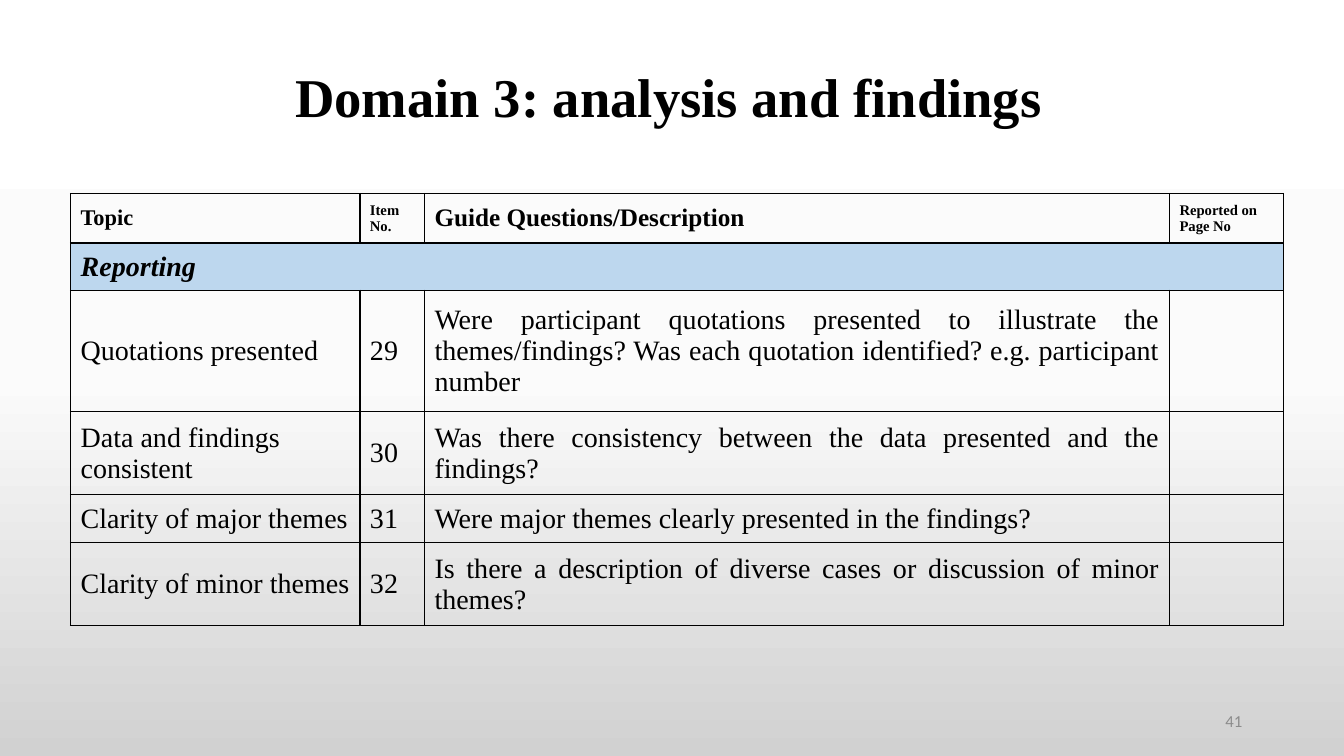
from copy import deepcopy
from dataclasses import dataclass

from lxml import etree
from pptx import Presentation
from pptx.dml.color import RGBColor
from pptx.enum import text
from pptx.oxml import ns
from pptx.util import Inches, Pt

SERIF = "Times New Roman"
BLACK = "000000"
BAND_BLUE = "BDD7EE"
COLUMN_WIDTHS = [2.87, 0.64, 7.39, 1.13]
ROW_HEIGHTS = [0.49, 0.47, 1.2, 0.83, 0.47, 0.83]
QUESTION_COLUMN = 2


@dataclass
class Style:
    size: float
    font: str = SERIF
    color: str = BLACK
    bold: bool = False
    italic: bool = False


@dataclass
class Heading:
    label: str
    size: float


@dataclass
class Item:
    topic: str
    number: str
    question: str


HEADINGS = [
    Heading("Topic", 16),
    Heading("Item No.", 10.5),
    Heading("Guide Questions/Description", 18),
    Heading("Reported on Page No", 10.5),
]
ITEMS = [
    Item("Quotations presented", "29",
         "Were participant quotations presented to illustrate the themes/findings? "
         "Was each quotation identified? e.g. participant number"),
    Item("Data and findings consistent", "30",
         "Was there consistency between the data presented and the findings?"),
    Item("Clarity of major themes", "31",
         "Were major themes clearly presented in the findings?"),
    Item("Clarity of minor themes", "32",
         "Is there a description of diverse cases or discussion of minor themes?"),
]


def rgb(value: str) -> RGBColor:
    return RGBColor.from_string(value)


def write(frame, words: str, style: Style, align=text.PP_ALIGN.LEFT):
    """Add one styled run to the frame's first paragraph."""
    para = frame.paragraphs[0]
    para.alignment = align
    span = para.add_run()
    span.text = words
    span.font.name = style.font
    span.font.size = Pt(style.size)
    span.font.bold = style.bold
    span.font.italic = style.italic
    span.font.color.rgb = rgb(style.color)
    return para


def paint_background(page, colors: list[str]) -> None:
    """Fill the page from top to bottom with evenly spaced colours."""
    fill = page.background.fill
    fill.gradient()
    fill.gradient_angle = 270
    stop_list = next(page.element.iter(ns.qn("a:gsLst")))
    while len(stop_list) < len(colors):
        stop_list.append(deepcopy(stop_list[-1]))
    for index, (stop, color) in enumerate(zip(fill.gradient_stops, colors)):
        stop.position = index / (len(colors) - 1)
        stop.color.rgb = rgb(color)


def add_borders(cell) -> None:
    """Draw a thin black line on all four sides, ahead of the cell's fill."""
    properties = cell._tc.get_or_add_tcPr()
    for index, side in enumerate(("lnL", "lnR", "lnT", "lnB")):
        line = etree.Element(ns.qn(f"a:{side}"), w=str(Pt(1)))
        solid = etree.SubElement(line, ns.qn("a:solidFill"))
        etree.SubElement(solid, ns.qn("a:srgbClr"), val=BLACK)
        properties.insert(index, line)


def add_checklist(page) -> None:
    frame = page.shapes.add_table(
        len(ROW_HEIGHTS), len(COLUMN_WIDTHS), Inches(0.7), Inches(1.92),
        Inches(sum(COLUMN_WIDTHS)), Inches(sum(ROW_HEIGHTS)))
    table = frame.table
    table.first_row = table.horz_banding = False
    for column, width in zip(table.columns, COLUMN_WIDTHS):
        column.width = Inches(width)
    for row, height in zip(table.rows, ROW_HEIGHTS):
        row.height = Inches(height)
    for cell in table.iter_cells():
        cell.vertical_anchor = text.MSO_ANCHOR.MIDDLE
        cell.fill.background()
        add_borders(cell)

    # Heading row
    for column, heading in enumerate(HEADINGS):
        write(table.cell(0, column).text_frame, heading.label,
              Style(heading.size, bold=True))

    # Section band
    band = table.cell(1, 0)
    band.merge(table.cell(1, len(COLUMN_WIDTHS) - 1))
    band.fill.solid()
    band.fill.fore_color.rgb = rgb(BAND_BLUE)
    write(band.text_frame, "Reporting", Style(20, bold=True, italic=True))

    # Checklist items
    for row, item in enumerate(ITEMS, start=2):
        for column, words in enumerate((item.topic, item.number, item.question)):
            align = (text.PP_ALIGN.JUSTIFY if column == QUESTION_COLUMN
                     else text.PP_ALIGN.LEFT)
            write(table.cell(row, column).text_frame, words, Style(20), align)


def add_title(page) -> None:
    title = page.shapes.title
    title.left, title.top = Inches(-0.44), Inches(0.35)
    title.width, title.height = Inches(14.14), Inches(1.28)
    title.text_frame.vertical_anchor = text.MSO_ANCHOR.MIDDLE
    para = write(title.text_frame, "Domain 3: analysis and findings",
                 Style(39, bold=True), text.PP_ALIGN.CENTER)
    para.line_spacing = 0.9


def add_page_number(page) -> None:
    box = page.shapes.add_textbox(Inches(9.42), Inches(6.95), Inches(3), Inches(0.4))
    box.text_frame.word_wrap = True
    box.text_frame.vertical_anchor = text.MSO_ANCHOR.MIDDLE
    write(box.text_frame, "41", Style(12, "Calibri", "8C8C8C"), text.PP_ALIGN.RIGHT)


def main() -> None:
    deck = Presentation()
    deck.slide_width, deck.slide_height = Inches(13.33), Inches(7.5)
    page = deck.slides.add_slide(deck.slide_layouts.get_by_name("Title Only"))
    paint_background(page, ["FFFFFF", "FBFBFB", "D1D1D1"])
    add_title(page)
    add_checklist(page)
    add_page_number(page)
    deck.save("out.pptx")


if __name__ == "__main__":
    main()
